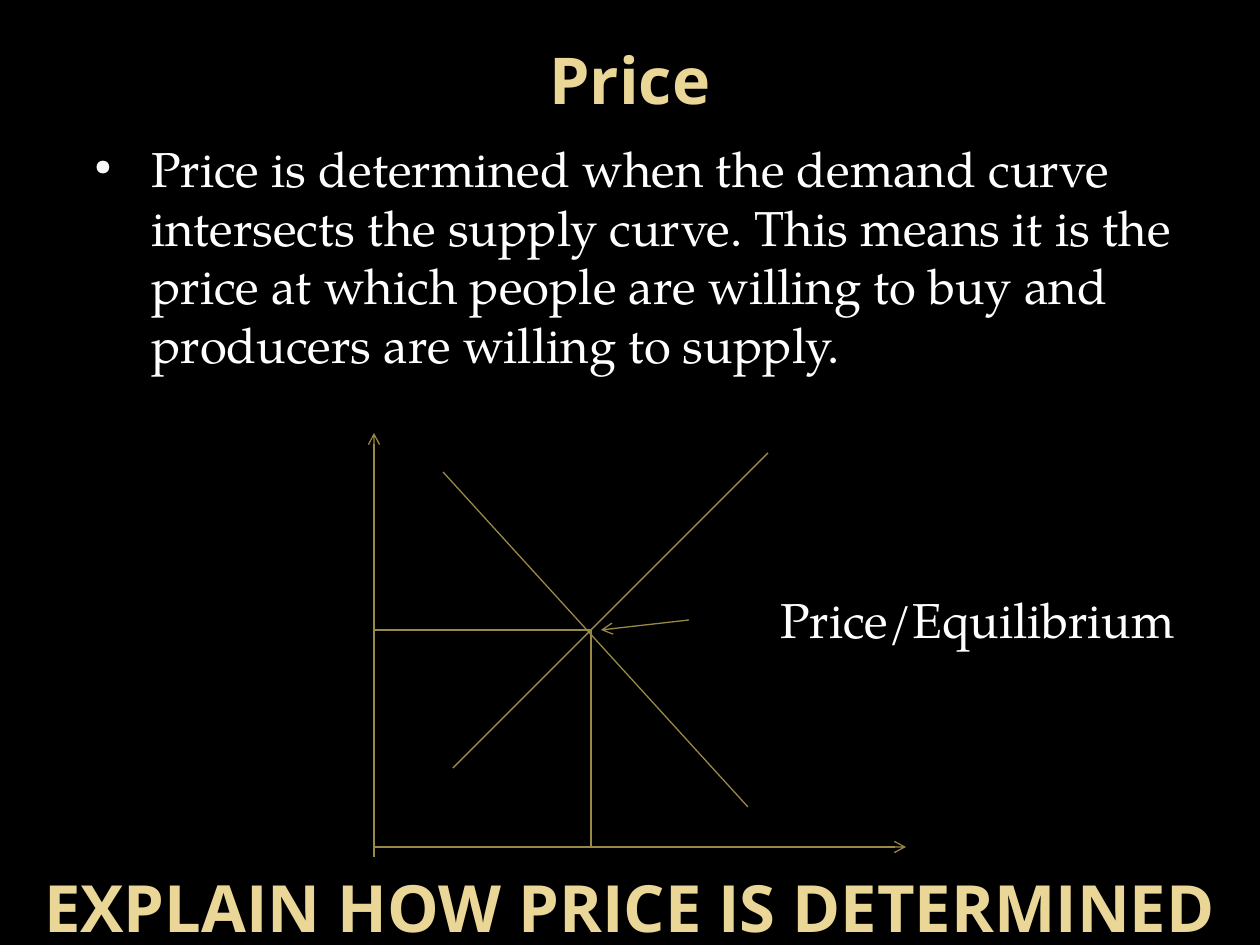
"""Build the slide on how supply and demand determine price."""
from lxml import etree
from pptx import Presentation
from pptx.dml.color import RGBColor
from pptx.enum.shapes import MSO_CONNECTOR
from pptx.enum.text import MSO_ANCHOR, PP_ALIGN
from pptx.oxml.ns import qn
from pptx.util import Pt

PX = 914400 // 126
STRAIGHT = MSO_CONNECTOR.STRAIGHT
TOP, MIDDLE, BOTTOM = MSO_ANCHOR.TOP, MSO_ANCHOR.MIDDLE, MSO_ANCHOR.BOTTOM
LEFT, CENTER = PP_ALIGN.LEFT, PP_ALIGN.CENTER
COLORS = {"background": "000000", "heading": "EAD696", "body": "FFFFFF",
          "bullet": "F9F9F9", "line": "998946"}
HEADING_FONT, BODY_FONT = "Open Sans", "TeX Gyre Pagella"

prs = Presentation()
prs.slide_width, prs.slide_height = 1260 * PX, 945 * PX
slide = prs.slides.add_slide(prs.slide_layouts[6])
slide.background.fill.solid()
slide.background.fill.fore_color.rgb = RGBColor.from_string(COLORS["background"])


def add_text(text, box, font, size, color, anchor, align, bold=False):
    frame = slide.shapes.add_textbox(*(n * PX for n in box)).text_frame
    frame.word_wrap = True
    frame.vertical_anchor = anchor
    frame.text = text
    paragraph = frame.paragraphs[0]
    paragraph.alignment = align
    style = paragraph.runs[0].font
    style.name, style.size, style.bold = font, Pt(size), bold
    style.color.rgb = RGBColor.from_string(COLORS[color])
    return frame


def add_line(start, end, arrow=False):
    line = slide.shapes.add_connector(STRAIGHT, *(n * PX for n in start + end))
    line.line.color.rgb = RGBColor.from_string(COLORS["line"])
    line.line.width = Pt(0.75)
    if arrow:
        etree.SubElement(line.line._get_or_add_ln(), qn("a:tailEnd"), type="arrow")
    etree.SubElement(line._element.spPr, qn("a:effectLst"))


add_text("Price", (63, 38, 1134, 81), HEADING_FONT, 36.9, "heading",
         MIDDLE, CENTER, bold=True)

definition = add_text(
    "Price is determined when the demand curve intersects the supply curve. "
    "This means it is the price at which people are willing to buy and "
    "producers are willing to supply.",
    (63, 133, 1134, 260), BODY_FONT, 28, "body", TOP, LEFT)
equilibrium = add_text("Price/Equilibrium", (768, 584, 429, 76),
                       BODY_FONT, 28, "body", TOP, LEFT)
for frame in (definition, equilibrium):
    frame.paragraphs[0].line_spacing = Pt(33.4)

bullet = definition.paragraphs[0]._p.get_or_add_pPr()
bullet.set("marL", str(76 * PX))
bullet.set("indent", str(-57 * PX))
bullet_color = etree.SubElement(bullet, qn("a:buClr"))
etree.SubElement(bullet_color, qn("a:srgbClr"), val=COLORS["bullet"])
etree.SubElement(bullet, qn("a:buSzPct"), val="65000")
etree.SubElement(bullet, qn("a:buFont"), typeface=BODY_FONT)
etree.SubElement(bullet, qn("a:buChar"), char="•")

axis_x, axis_y = 374, 847
price_x, price_y = 591, 630
for start, end, arrow in (
    ((axis_x, 857), (axis_x, 433), True),
    ((axis_x, axis_y), (906, axis_y), True),
    ((453, 768), (768, 453), False),
    ((443, 472), (748, 807), False),
    ((axis_x, price_y), (price_x, price_y), False),
    ((price_x, price_y), (price_x, axis_y), False),
    ((689, 620), (601, price_y), True),
):
    add_line(start, end, arrow)

task = add_text("EXPLAIN HOW PRICE IS DETERMINED", (0, 827, 1260, 118),
                HEADING_FONT, 37.2, "heading", BOTTOM, CENTER, bold=True)
task.margin_left = task.margin_right = 6 * PX
task.margin_top = task.margin_bottom = 0
task.paragraphs[0].line_spacing = 0.8

prs.save("out.pptx")
